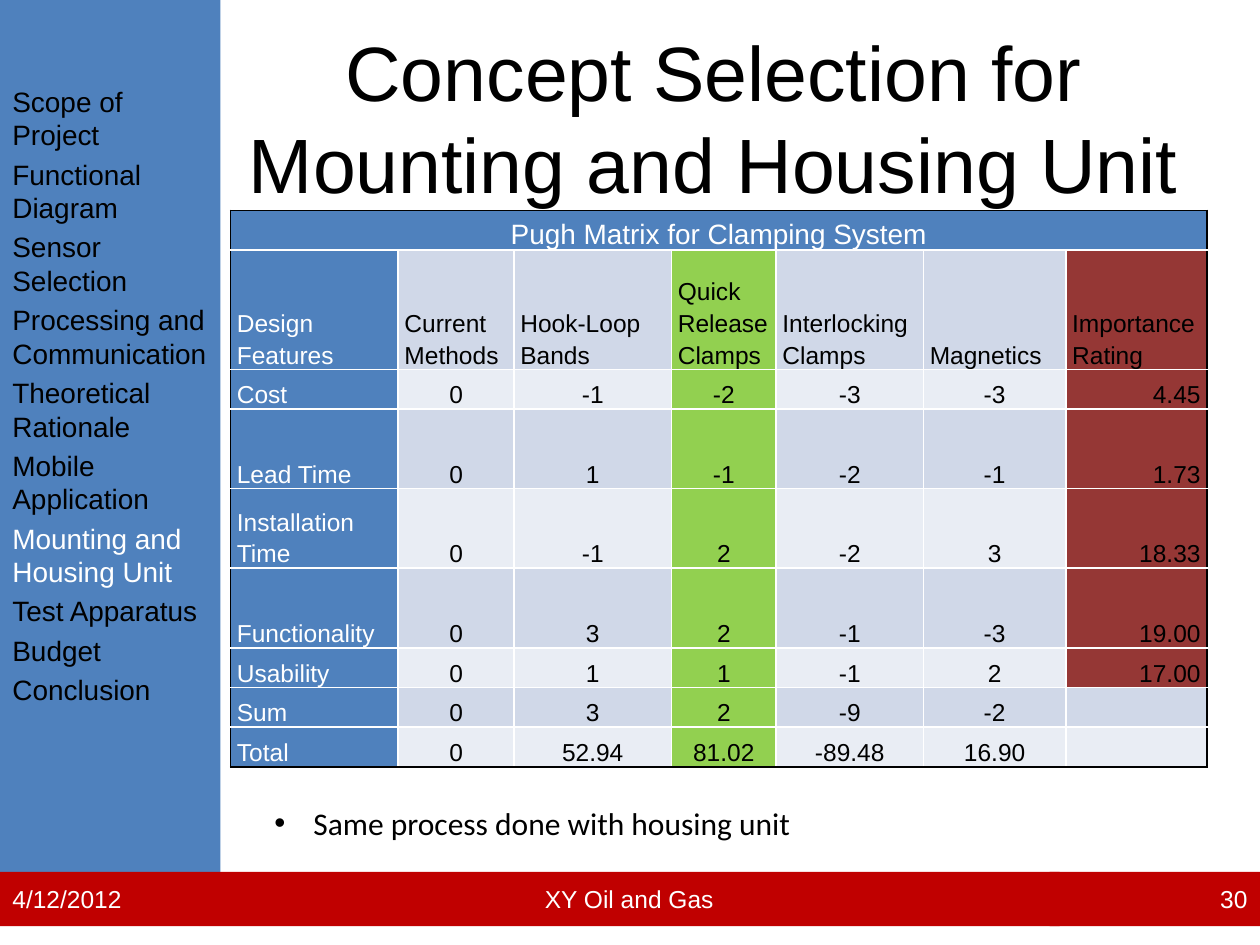
from lxml.etree import SubElement
from pptx import Presentation
from pptx.dml.color import RGBColor
from pptx.enum.shapes import MSO_SHAPE
from pptx.enum.text import MSO_ANCHOR as Anchor, MSO_AUTO_SIZE as AutoSize, PP_ALIGN as Align
from pptx.oxml.ns import qn
from pptx.util import Inches, Pt

BLACK, WHITE, BLUE, RED = "000000", "FFFFFF", "4F81BD", "C00000"
GREEN, MAROON = "92D050", "953735"
BANDS = ("E9EDF4", "D0D8E8")  # even rows, odd rows

TITLE = "Concept Selection for Mounting and Housing Unit"
SECTIONS = ["Scope of Project", "Functional Diagram", "Sensor Selection",
            "Processing and Communication", "Theoretical Rationale",
            "Mobile Application", "Mounting and Housing Unit",
            "Test Apparatus", "Budget", "Conclusion"]
CURRENT_SECTION = "Mounting and Housing Unit"
FOOTER = [  # left, width, text, alignment
    (0, 1.58, "4/12/2012", Align.LEFT),
    (1.58, 6.83, "XY Oil and Gas", Align.CENTER),
    (8.33, 1.67, "30", Align.RIGHT),
]
NOTE = "Same process done with housing unit"

MATRIX_TITLE = "Pugh Matrix for Clamping System"
MATRIX = [
    ["Design Features", "Current Methods", "Hook-Loop Bands", "Quick Release Clamps",
     "Interlocking Clamps", "Magnetics", "Importance Rating"],
    ["Cost", "0", "-1", "-2", "-3", "-3", "4.45"],
    ["Lead Time", "0", "1", "-1", "-2", "-1", "1.73"],
    ["Installation Time", "0", "-1", "2", "-2", "3", "18.33"],
    ["Functionality", "0", "3", "2", "-1", "-3", "19.00"],
    ["Usability", "0", "1", "1", "-1", "2", "17.00"],
    ["Sum", "0", "3", "2", "-9", "-2", ""],
    ["Total", "0", "52.94", "81.02", "-89.48", "16.90", ""],
]
COLUMN_WIDTHS = [1.33, 0.92, 1.25, 0.83, 1.17, 1.13, 1.12]
ROW_LINES = [1, 3, 1, 2, 2, 2, 1, 1, 1]
MATRIX_HEIGHT = 4.42
CHOSEN_COLUMN = 3
LAST_COLUMN = len(COLUMN_WIDTHS) - 1
LAST_ROW = len(MATRIX)

SIDEBAR_WIDTH, FOOTER_TOP, FOOTER_HEIGHT = 1.75, 6.92, 0.43


def color(hex_value):
    return RGBColor.from_string(hex_value)


def format_text(para, size, hex_value, align=Align.LEFT, font_name="Arial"):
    para.alignment = align
    para.font.size = Pt(size)
    para.font.name = font_name
    para.font.color.rgb = color(hex_value)


def add_panel(slide, left, top, width, height, fill):
    panel = slide.shapes.add_shape(MSO_SHAPE.RECTANGLE, *map(Inches, (left, top, width, height)))
    panel.shadow.inherit = False
    panel.fill.solid()
    panel.fill.fore_color.rgb = color(fill)
    panel.line.fill.background()
    panel.text_frame.word_wrap = True
    return panel


def add_title(slide):
    title = slide.shapes.title
    title.left, title.top, title.width, title.height = map(Inches, (1.75, 0.3, 7.83, 1.25))
    frame = title.text_frame
    frame.text = TITLE
    frame.word_wrap = True
    frame.auto_size = AutoSize.NONE
    frame.vertical_anchor = Anchor.MIDDLE
    format_text(frame.paragraphs[0], 44, BLACK, Align.CENTER)


def add_sidebar(slide):
    frame = add_panel(slide, 0, 0, SIDEBAR_WIDTH, FOOTER_TOP, BLUE).text_frame
    frame.vertical_anchor = Anchor.TOP
    frame.margin_top = Inches(0.67)
    frame.text = "\n".join(SECTIONS)
    for para in frame.paragraphs:
        format_text(para, 16, WHITE if para.text == CURRENT_SECTION else BLACK)
        para.space_before = Pt(3.2)


def add_footer(slide):
    for left, width, text, align in FOOTER:
        frame = add_panel(slide, left, FOOTER_TOP, width, FOOTER_HEIGHT, RED).text_frame
        frame.vertical_anchor = Anchor.MIDDLE
        frame.text = text
        format_text(frame.paragraphs[0], 14, WHITE, align)


def set_borders(cell, row, column):
    """Draw white grid lines, black on the outer edge of the matrix."""
    outer = {"lnL": column == 0, "lnR": row == 0 or column == LAST_COLUMN,
             "lnT": row == 0, "lnB": row == LAST_ROW}
    properties = cell._tc.get_or_add_tcPr()
    for position, (side, is_outer) in enumerate(outer.items()):
        line = SubElement(properties, qn(f"a:{side}"), w=str(Pt(1)))
        fill = SubElement(line, qn("a:solidFill"))
        SubElement(fill, qn("a:srgbClr"), val=BLACK if is_outer else WHITE)
        properties.insert(position, line)


def cell_fill(row, column, text):
    if row == 0 or column == 0:
        return BLUE
    if column == CHOSEN_COLUMN:
        return GREEN
    if column == LAST_COLUMN and text:
        return MAROON
    return BANDS[row % 2]


def cell_align(row, column):
    if row == 0:
        return Align.CENTER
    if row == 1 or column == 0:
        return Align.LEFT
    return Align.RIGHT if column == LAST_COLUMN else Align.CENTER


def add_matrix(slide):
    rows = [[MATRIX_TITLE] + [""] * LAST_COLUMN] + MATRIX
    table = slide.shapes.add_table(
        len(rows), len(COLUMN_WIDTHS), Inches(1.83), Inches(1.67),
        Inches(sum(COLUMN_WIDTHS)), Inches(MATRIX_HEIGHT)).table
    table.first_row = table.horz_banding = False
    for column, width in zip(table.columns, COLUMN_WIDTHS):
        column.width = Inches(width)
    for row, lines in zip(table.rows, ROW_LINES):
        row.height = Inches(MATRIX_HEIGHT * lines / sum(ROW_LINES))
    table.cell(0, 0).merge(table.cell(0, LAST_COLUMN))

    for r, texts in enumerate(rows):
        for c, text in enumerate(texts):
            cell = table.cell(r, c)
            cell.text = text
            cell.vertical_anchor = Anchor.BOTTOM
            cell.margin_left = cell.margin_right = Inches(0.05)
            cell.margin_top = cell.margin_bottom = 0
            cell.fill.solid()
            cell.fill.fore_color.rgb = color(cell_fill(r, c, text))
            set_borders(cell, r, c)
            para = cell.text_frame.paragraphs[0]
            para.line_spacing = 1.15
            format_text(para, 16 if r == 0 else 14,
                        WHITE if r == 0 or c == 0 else BLACK, cell_align(r, c))


def add_note(slide):
    box = slide.shapes.add_textbox(*map(Inches, (2.08, 6.33, 6, 0.4)))
    box.text_frame.word_wrap = True
    para = box.text_frame.paragraphs[0]
    para.text = NOTE
    format_text(para, 18, BLACK, font_name="Calibri")
    properties = para._p.get_or_add_pPr()
    indent = Inches(0.31)
    properties.set("marL", str(indent))
    properties.set("indent", str(-indent))
    bullet_font = SubElement(properties, qn("a:buFont"), typeface="Arial")
    bullet = SubElement(properties, qn("a:buChar"), char="•")
    properties.find(qn("a:defRPr")).addprevious(bullet_font)
    bullet_font.addnext(bullet)


def main():
    deck = Presentation()
    deck.slide_width, deck.slide_height = Inches(10), Inches(7.5)
    slide = deck.slides.add_slide(deck.slide_layouts[5])
    add_title(slide)
    add_sidebar(slide)
    add_footer(slide)
    add_matrix(slide)
    add_note(slide)
    deck.save("out.pptx")


if __name__ == "__main__":
    main()
